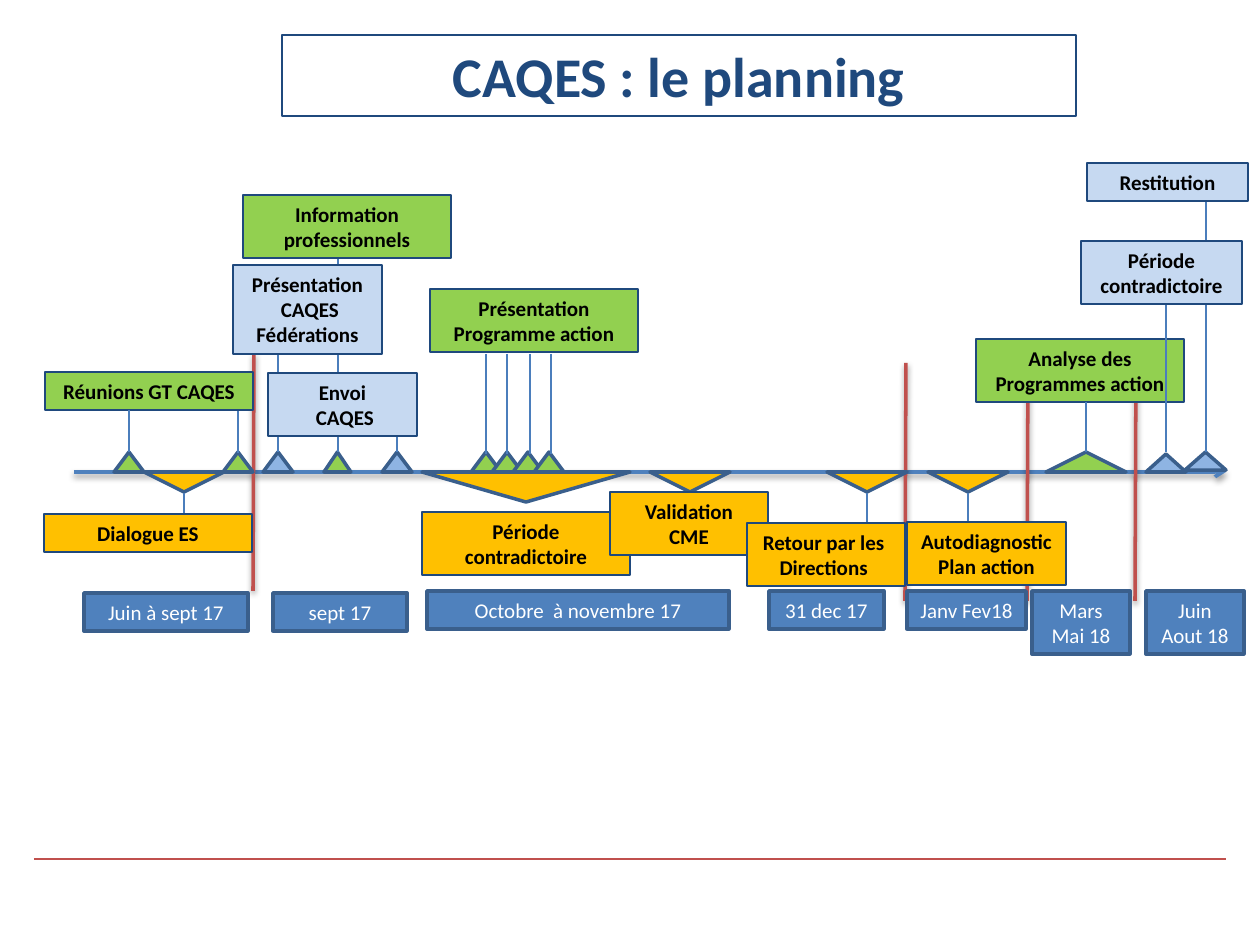
import dataclasses

import pptx
import pptx.dml.color
import pptx.enum.shapes
import pptx.enum.text
import pptx.oxml
import pptx.oxml.ns
import pptx.util

PX = 914400 / 126
AXIS_Y = 472
COLORS = {
    "navy": "1F497D", "blue": "4F81BD", "edge": "3A5F8C", "stem": "4B7EBC",
    "red": "C0504D", "green": "92D050", "amber": "FFC000", "sky": "8EB4E3",
    "pale": "C6D9F1", "black": "000000", "white": "FFFFFF",
}
SHADOW = (
    '<a:outerShdw blurRad="40000" dist="20000" dir="5400000" rotWithShape="0">'
    '<a:srgbClr val="000000"><a:alpha val="38000"/></a:srgbClr></a:outerShdw>'
)


@dataclasses.dataclass(frozen=True)
class Label:
    text: str
    left: int
    top: int
    width: int
    height: int
    fill: str


@dataclasses.dataclass(frozen=True)
class Marker:
    """A triangle on the axis; rise lifts it off the axis."""
    left: int
    fill: str
    width: int = 30
    height: int = 20
    rise: int = 0


@dataclasses.dataclass(frozen=True)
class Line:
    x1: int
    y1: int
    x2: int
    y2: int


DIVIDERS = (
    Line(254, 354, 253, 591),
    Line(906, 363, 905, 601),
    Line(1028, 363, 1027, 601),
    Line(1136, 363, 1135, 601),
)
EVENTS_ABOVE = (
    Marker(114, "green"), Marker(223, "green"), Marker(263, "sky"),
    *(Marker(471 + 21 * step, "green") for step in range(4)),
    Marker(324, "green", width=27), Marker(382, "sky"),
    Marker(1046, "green", width=80),
    Marker(1146, "sky", width=40, height=18),
    Marker(1185, "sky", width=41, height=18, rise=2),
)
EVENTS_BELOW = (
    Marker(144, "amber", width=80),
    Marker(422, "amber", width=208, height=30),
    *(Marker(left, "amber", width=80) for left in (650, 827, 928)),
)
STEMS = tuple(Line(x, top, x, bottom) for x, top, bottom in (
    (129, 410, 452), (238, 411, 453), (278, 354, 452), (338, 258, 452),
    (397, 437, 452), (184, 493, 514), (867, 493, 523), (968, 493, 523),
    (486, 354, 454), (507, 354, 454), (530, 354, 454), (551, 354, 454),
    (1086, 402, 452), (1166, 304, 452), (1206, 201, 452),
))
LABELS_BEHIND_STEMS = (
    Label("Réunions GT CAQES", 45, 372, 208, 38, "green"),
    Label("Analyse des Programmes action", 976, 339, 208, 63, "green"),
)
LABELS = (
    Label("Dialogue ES", 44, 514, 208, 38, "amber"),
    Label("Période contradictoire", 422, 512, 208, 63, "amber"),
    Label("Information professionnels", 243, 195, 208, 63, "green"),
    Label("Présentation\n CAQES Fédérations", 233, 265, 149, 89, "pale"),
    Label("Envoi\n CAQES", 268, 373, 149, 63, "pale"),
    Label("Présentation Programme action", 430, 289, 208, 63, "green"),
    Label("Validation\nCME", 610, 492, 158, 63, "amber"),
    Label("Retour par les \nDirections ", 747, 523, 158, 63, "amber"),
    Label("Autodiagnostic\nPlan action", 907, 522, 159, 63, "amber"),
    Label("Restitution", 1087, 163, 161, 38, "pale"),
    Label("Période contradictoire", 1081, 241, 161, 63, "pale"),
)
DATES = (
    Label("Juin à sept 17", 84, 593, 164, 38, "blue"),
    Label("sept 17", 273, 593, 134, 38, "blue"),
    Label("Octobre  à novembre 17", 427, 591, 302, 38, "blue"),
    Label("31 dec 17", 769, 591, 115, 38, "blue"),
    Label("Janv Fev18", 907, 591, 119, 38, "blue"),
    Label("Mars Mai 18", 1032, 591, 98, 63, "blue"),
    Label("Juin Aout 18", 1146, 591, 98, 63, "blue"),
)


def px(length: int) -> pptx.util.Emu:
    return pptx.util.Emu(round(length * PX))


def rgb(name: str) -> pptx.dml.color.RGBColor:
    return pptx.dml.color.RGBColor.from_string(COLORS[name])


def write_text(box, text: str, *, size: int = 12, color: str = "black", bold: bool = True) -> None:
    frame = box.text_frame
    frame.word_wrap = True
    frame.auto_size = pptx.enum.text.MSO_AUTO_SIZE.SHAPE_TO_FIT_TEXT
    frame.vertical_anchor = pptx.enum.text.MSO_ANCHOR.TOP
    for index, words in enumerate(text.split("\n")):
        para = frame.add_paragraph() if index else frame.paragraphs[0]
        para.alignment = pptx.enum.text.PP_ALIGN.CENTER
        span = para.add_run()
        span.text = words
        span.font.name = "Calibri"
        span.font.size = pptx.util.Pt(size)
        span.font.bold = bold
        span.font.color.rgb = rgb(color)


def draw_shape(page, kind, left: int, top: int, width: int, height: int, *,
               fill: str | None, line: str, weight: float):
    shape = page.shapes.add_shape(kind, px(left), px(top), px(width), px(height))
    shape.shadow.inherit = False
    if fill:
        shape.fill.solid()
        shape.fill.fore_color.rgb = rgb(fill)
    else:
        shape.fill.background()
    shape.line.color.rgb = rgb(line)
    shape.line.width = pptx.util.Pt(weight)
    return shape


def draw_label(page, label: Label, *, line: str = "navy", weight: float = 0.75,
               color: str = "black", bold: bool = True) -> None:
    box = draw_shape(page, pptx.enum.shapes.MSO_SHAPE.RECTANGLE, label.left, label.top,
                     label.width, label.height, fill=label.fill, line=line, weight=weight)
    write_text(box, label.text, color=color, bold=bold)


def draw_marker(page, marker: Marker, *, above: bool) -> None:
    kinds = pptx.enum.shapes.MSO_SHAPE
    kind = kinds.ISOSCELES_TRIANGLE if above else kinds.FLOWCHART_MERGE
    top = AXIS_Y - marker.height - marker.rise if above else AXIS_Y
    draw_shape(page, kind, marker.left, top, marker.width, marker.height,
               fill=marker.fill, line="edge", weight=2)


def draw_line(page, line: Line, color: str, weight: float, *,
              shadow: bool = False, arrow: bool = False) -> None:
    connector = page.shapes.add_connector(
        pptx.enum.shapes.MSO_CONNECTOR.STRAIGHT,
        px(line.x1), px(line.y1), px(line.x2), px(line.y2))
    connector.line.color.rgb = rgb(color)
    connector.line.width = pptx.util.Pt(weight)
    namespace = pptx.oxml.ns.nsdecls("a")
    if arrow:
        connector.line._get_or_add_ln().append(
            pptx.oxml.parse_xml(f'<a:tailEnd {namespace} type="arrow"/>'))
    connector._element.spPr.append(pptx.oxml.parse_xml(
        f'<a:effectLst {namespace}>{SHADOW if shadow else ""}</a:effectLst>'))


def main() -> None:
    deck = pptx.Presentation()
    deck.slide_width = px(1260)
    deck.slide_height = px(945)
    page = deck.slides.add_slide(deck.slide_layouts[6])

    draw_line(page, Line(34, 859, 1226, 859), "red", 1.25)
    title = draw_shape(page, pptx.enum.shapes.MSO_SHAPE.RECTANGLE, 282, 35, 794, 81,
                       fill=None, line="navy", weight=0.75)
    write_text(title, "CAQES : le planning", size=32, color="navy")

    draw_line(page, Line(74, AXIS_Y, 1226, AXIS_Y), "blue", 2, shadow=True, arrow=True)
    for divider in DIVIDERS:
        draw_line(page, divider, "red", 2, shadow=True)
    for marker in EVENTS_ABOVE:
        draw_marker(page, marker, above=True)
    for marker in EVENTS_BELOW:
        draw_marker(page, marker, above=False)
    for label in LABELS_BEHIND_STEMS:
        draw_label(page, label)
    for stem in STEMS:
        draw_line(page, stem, "stem", 0.75)
    for label in LABELS:
        draw_label(page, label)
    for date in DATES:
        draw_label(page, date, line="edge", weight=2, color="white", bold=False)

    deck.save("out.pptx")


if __name__ == "__main__":
    main()
